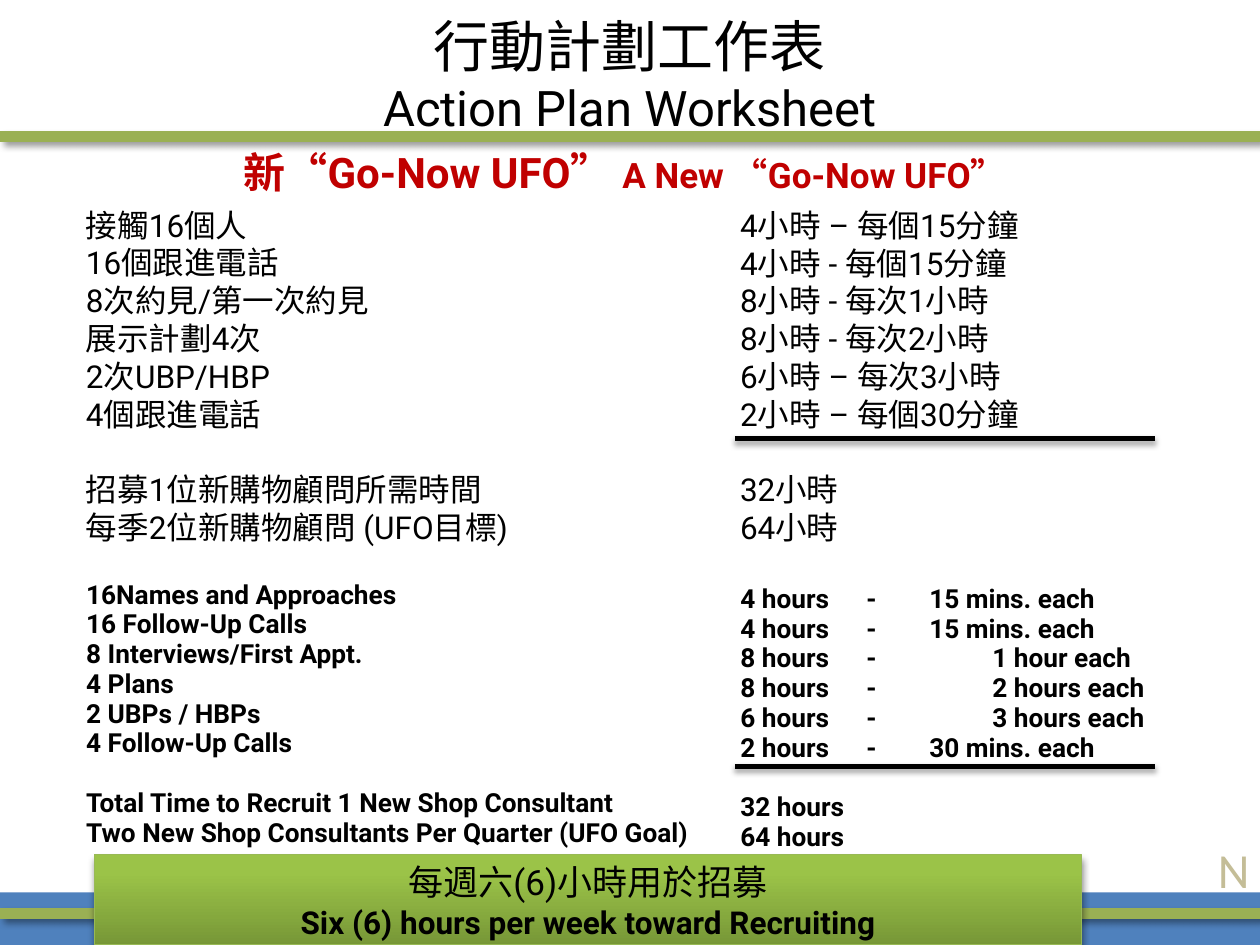
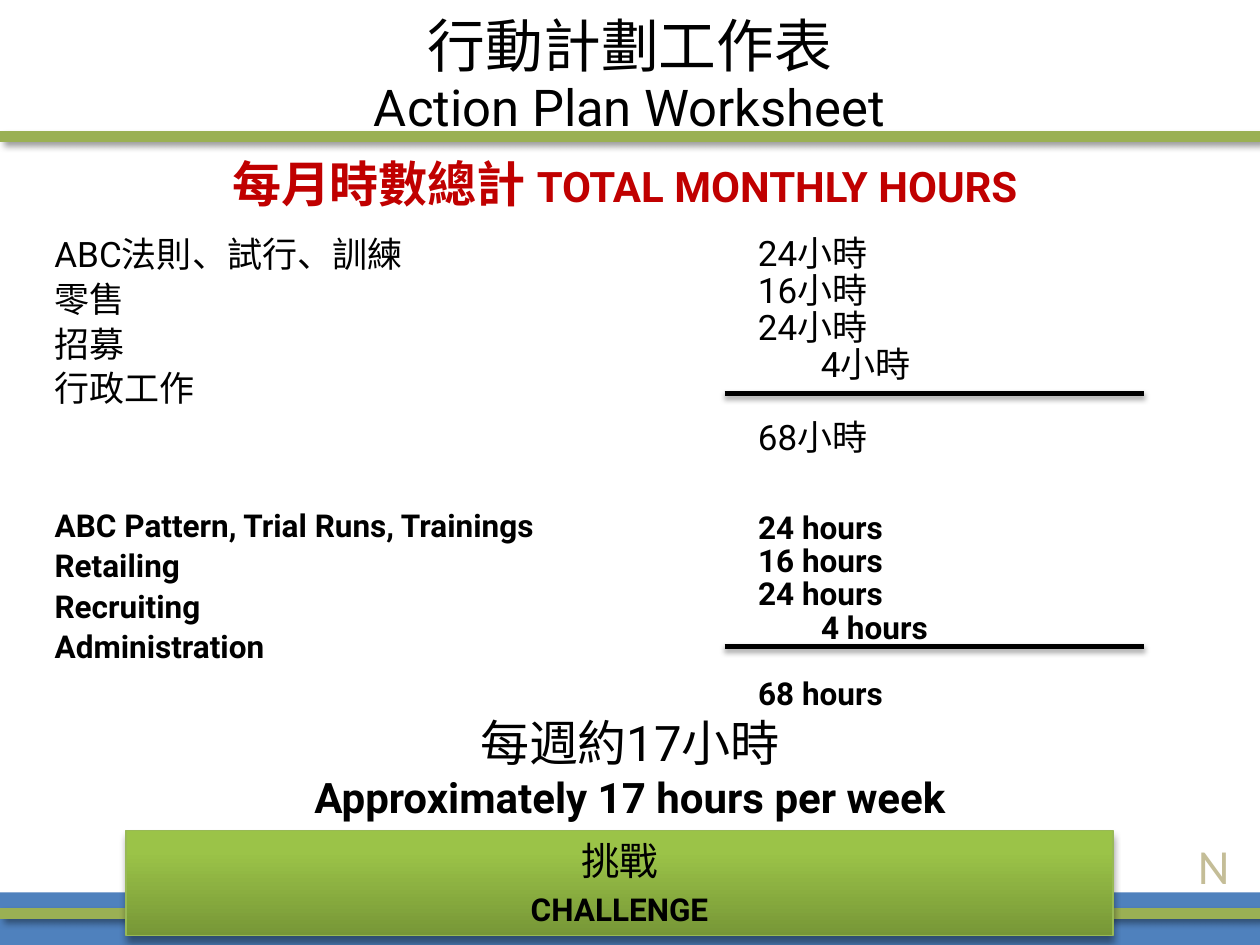
from lxml import etree
from pptx import Presentation
from pptx.dml.color import RGBColor
from pptx.enum.shapes import MSO_CONNECTOR, MSO_SHAPE
from pptx.enum.text import MSO_ANCHOR, MSO_AUTO_SIZE, PP_ALIGN
from pptx.oxml.ns import qn
from pptx.util import Inches, Pt

CENTER, LEFT = PP_ALIGN.CENTER, PP_ALIGN.LEFT
TOP, MIDDLE = MSO_ANCHOR.TOP, MSO_ANCHOR.MIDDLE
FIXED = MSO_AUTO_SIZE.NONE
RECT, LINE = MSO_SHAPE.RECTANGLE, MSO_CONNECTOR.STRAIGHT

THEME = {
    "ink": "000000", "red": "C00000", "tan": "C4BD97",
    "blue": "4F81BD", "green": "9AB054", "edge": "98B955",
    "dark": "779737", "light": "9BC348",
    "latin": "Roboto", "han": "Noto Sans CJK SC", "mark": "Calibri",
    "mark_size": 28,
}
LATIN, HAN = THEME["latin"], THEME["han"]

# Grid: 120 columns by 90 rows, each a twelfth of an inch
CELL = Pt(6)
WIDE, HIGH = 120, 90

# Columns: holder, box, leading, space before, gap above totals,
# size, bold, tab stops in inches, lines
PAGES = [
    {
        "title": (32, 28),
        "head": ((16, 13.4, 87, 6),
                 [("新", 24, HAN), ("“Go-Now UFO” ", 24, LATIN),
                  ("A New “Go-Now UFO”", 20, LATIN)]),
        "items": 6,
        "columns": [
            (None, (7, 19, 51, 31), 1.0, 0, 21.5, 18, False, (),
             ["接觸16個人", "16個跟進電話", "8次約見/第一次約見", "展示計劃4次",
              "2次UBP/HBP", "4個跟進電話", "招募1位新購物顧問所需時間",
              "每季2位新購物顧問 (UFO目標)"]),
            (None, (69.3, 19, 46, 33), 1.0, 0, 21.5, 18, False, (),
             ["4小時 – 每個15分鐘", "4小時 - 每個15分鐘", "8小時 - 每次1小時",
              "8小時 - 每次2小時", "6小時 – 每次3小時", "2小時 – 每個30分鐘",
              "32小時", "64小時"]),
            (1, (7, 54.6, 66, 27), Pt(17), 0, 17, 15, True, (),
             ["16Names and Approaches", "16 Follow-Up Calls",
              "8 Interviews/First Appt.", "4 Plans", "2 UBPs / HBPs",
              "4 Follow-Up Calls",
              "Total Time to Recruit 1 New Shop Consultant",
              "Two New Shop Consultants Per Quarter (UFO Goal)"]),
            (2, (69.3, 55, 46, 27), Pt(17), 0, 17, 15, True,
             (0.97, 1.14, 1.25),
             ["4 hours\t-\t15 mins. each", "4 hours\t-\t15 mins. each",
              "8 hours\t-\t\t1 hour each", "8 hours\t-\t\t2 hours each",
              "6 hours\t-\t\t3 hours each", "2 hours\t-\t30 mins. each",
              "32 hours", "64 hours"]),
        ],
        "sums": (70, 110, (41.8, 73)),
        "notes": [],
        "box": ((9, 81.4, 94, 8.6), 0,
                [("每週六(6)小時用於招募", 20, LATIN, False),
                 ("Six (6) hours per week toward Recruiting", 18, LATIN, True)]),
        "mark": (113, 79.4, 9, 6.8),
    },
    {
        "title": (33, 29),
        "head": ((16, 14, 87, 6.8),
                 [("每月時數總計 ", 28, HAN), ("TOTAL MONTHLY HOURS", 24, LATIN)]),
        "items": 4,
        "columns": [
            (None, (4, 22, 65, 18.5), 0.9, 4, 0, 20, False, (),
             ["ABC法則、試行、訓練", "零售", "招募", "行政工作"]),
            (None, (71, 22, 47, 22.4), Pt(21), 0, 21, 20, False, (0.14,),
             ["24小時", "16小時", "24小時", "\t4小時", "68小時"]),
            (1, (4, 48, 65, 20), 0.9, 3.6, 0, 18, True, (),
             ["ABC Pattern, Trial Runs, Trainings", "Retailing",
              "Recruiting", "Administration"]),
            (2, (71, 48.2, 47, 24.5), Pt(19), 0, 19, 18, True, (0.13,),
             ["24 hours", "16 hours", "24 hours", "\t4 hours", "68 hours"]),
        ],
        "sums": (69, 109, (37.5, 61.6)),
        "notes": [("每週約17小時", 28, LATIN, False),
                  ("Approximately 17 hours per week", 24, LATIN, True)],
        "box": ((12, 79.1, 94, 10), 4,
                [("挑戰", 22, HAN, False), ("CHALLENGE", 18, LATIN, True)]),
        "mark": (111.1, 79, 9, 6.8),
    },
]


def style(run, size, face, bold=False, tint="ink"):
    """Set a run's type; curly quotes take the wide Han form."""
    font = run.font
    font.size, font.name, font.bold = Pt(size), face, bold
    font.color.rgb = RGBColor.from_string(THEME[tint])
    east = etree.SubElement(run._r.get_or_add_rPr(), qn("a:ea"))
    east.set("typeface", HAN if "“" in run.text else face)


def shade(shape, alpha, blur, dist, turn):
    """Give a shape a soft black shadow."""
    props = shape._element.spPr
    for old in props.findall(qn("a:effectLst")):
        props.remove(old)
    cast = etree.SubElement(etree.SubElement(props, qn("a:effectLst")),
                            qn("a:outerShdw"), blurRad=str(Pt(blur)),
                            dist=str(Pt(dist)), dir=str(turn * 60000),
                            rotWithShape="0")
    tone = etree.SubElement(cast, qn("a:srgbClr"), val=THEME["ink"])
    etree.SubElement(tone, qn("a:alpha"), val=str(alpha * 1000))


deck = Presentation()
deck.slide_width, deck.slide_height = WIDE * CELL, HIGH * CELL

for page in PAGES:
    slide = deck.slides.add_slide(deck.slide_layouts[3])
    shapes = slide.shapes

    # Title
    title = shapes.title
    title.left, title.top, title.width, title.height = (
        int(n * CELL) for n in (6, 0, 108, 15))
    frame = title.text_frame
    frame.text = "行動計劃工作表\vAction Plan Worksheet"
    frame.auto_size, frame.vertical_anchor = FIXED, MIDDLE
    para = frame.paragraphs[0]
    para.alignment, para.line_spacing = CENTER, Pt(33)
    for run, size, face in zip(para.runs, page["title"], (HAN, LATIN)):
        style(run, size, face)

    # Red heading
    place, parts = page["head"]
    frame = shapes.add_textbox(*(int(n * CELL) for n in place)).text_frame
    frame.word_wrap = True
    para = frame.paragraphs[0]
    para.alignment = CENTER
    for text, size, face in parts:
        run = para.add_run()
        run.text = text
        style(run, size, face, True, "red")

    # Columns of tasks and hours
    for holder, place, lead, before, gap, size, bold, tabs, lines in page["columns"]:
        spot = [int(n * CELL) for n in place]
        if holder:
            body = slide.placeholders[holder]
            body.left, body.top, body.width, body.height = spot
        else:
            body = shapes.add_textbox(*spot)
        frame = body.text_frame
        frame.text = "\n".join(lines)
        frame.word_wrap, frame.auto_size = True, FIXED
        frame.vertical_anchor = TOP
        for row, para in enumerate(frame.paragraphs):
            para.alignment, para.line_spacing = LEFT, lead
            para.space_before = Pt(gap if row == page["items"] else before)
            props = para._p.get_or_add_pPr()
            props.set("marL", "0")
            props.set("indent", "0")
            etree.SubElement(props, qn("a:buNone"))
            if tabs:
                stops = etree.SubElement(props, qn("a:tabLst"))
                for stop in tabs:
                    etree.SubElement(stops, qn("a:tab"),
                                     pos=str(Inches(stop)), algn="l")
            for run in para.runs:
                style(run, size, LATIN, bold)

    # Blue foot band
    band = shapes.add_shape(RECT, 0, 85 * CELL, WIDE * CELL, 5 * CELL)
    band.shadow.inherit = False
    band.fill.solid()
    band.fill.fore_color.rgb = RGBColor.from_string(THEME["blue"])
    band.line.fill.background()

    # Green rules across the slide, black rules above the sums
    start, end, rows = page["sums"]
    rules = [(0, WIDE, row, "green", 6, (40, 4, 3, 45)) for row in (13, 87)]
    rules += [(start, end, row, "ink", 3, (35, 3.1, 1.8, 90)) for row in rows]
    for left, right, row, tint, width, cast in rules:
        rule = shapes.add_connector(LINE, left * CELL, int(row * CELL),
                                    right * CELL, int(row * CELL))
        rule.line.color.rgb = RGBColor.from_string(THEME[tint])
        rule.line.width = Pt(width)
        shade(rule, *cast)

    # Green box
    place, before, lines = page["box"]
    box = shapes.add_shape(RECT, *(int(n * CELL) for n in place))
    box.fill.gradient()
    box.fill.gradient_angle = 90
    for stop, tint, share in zip(box.fill.gradient_stops, ("dark", "light"), (0, 0.8)):
        stop.color.rgb = RGBColor.from_string(THEME[tint])
        stop.position = share
    box.line.color.rgb = RGBColor.from_string(THEME["edge"])
    box.line.width = Pt(0.75)
    shade(box, 40, 4, 3, 90)
    groups = [(box, before, lines)]

    # Weekly note
    if page["notes"]:
        note = shapes.add_textbox(0, int(67.3 * CELL), WIDE * CELL, int(11.8 * CELL))
        groups.append((note, 0, page["notes"]))

    for shape, before, lines in groups:
        frame = shape.text_frame
        frame.text = "\n".join(line[0] for line in lines)
        frame.word_wrap, frame.vertical_anchor = True, TOP
        for para, (text, size, face, bold) in zip(frame.paragraphs, lines):
            para.alignment, para.space_before = CENTER, Pt(before)
            style(para.runs[0], size, face, bold)

    # Corner letter
    frame = shapes.add_textbox(*(int(n * CELL) for n in page["mark"])).text_frame
    frame.text, frame.word_wrap = "N", True
    frame.paragraphs[0].alignment = CENTER
    style(frame.paragraphs[0].runs[0], THEME["mark_size"], THEME["mark"], tint="tan")

deck.save("out.pptx")
